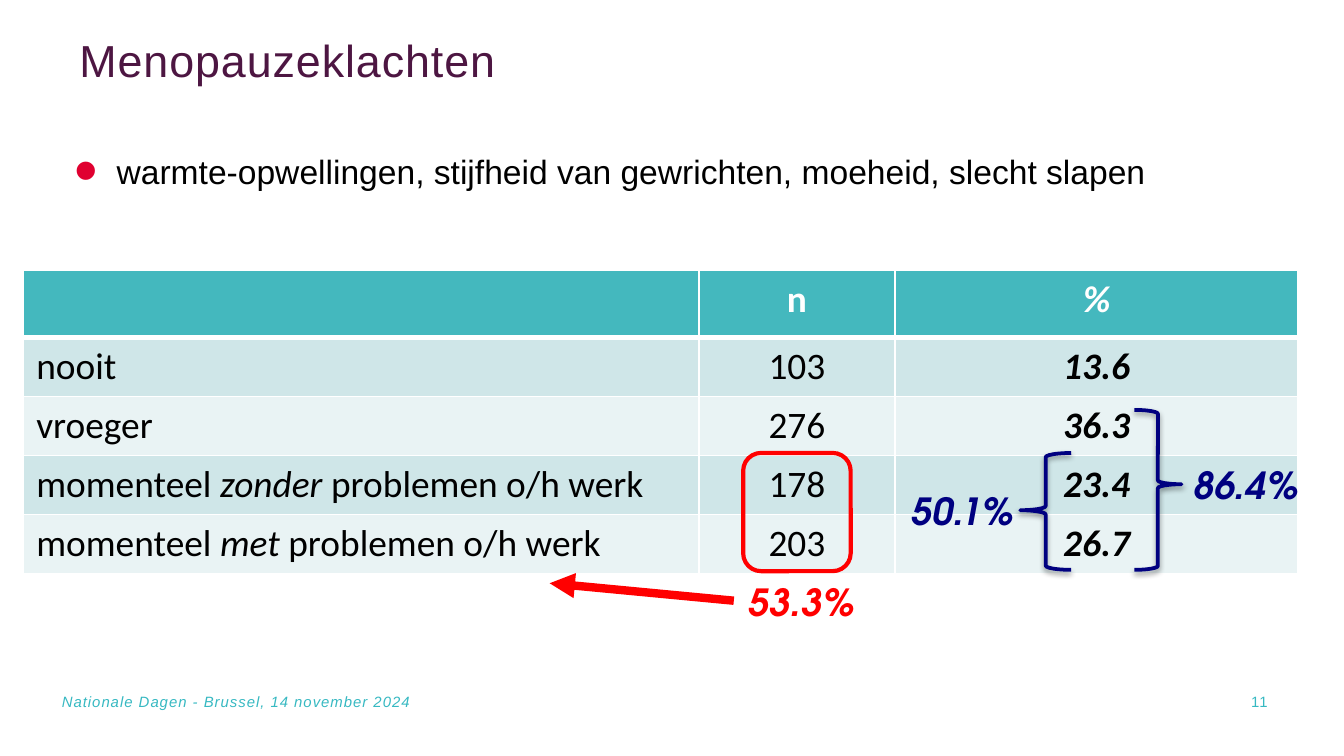
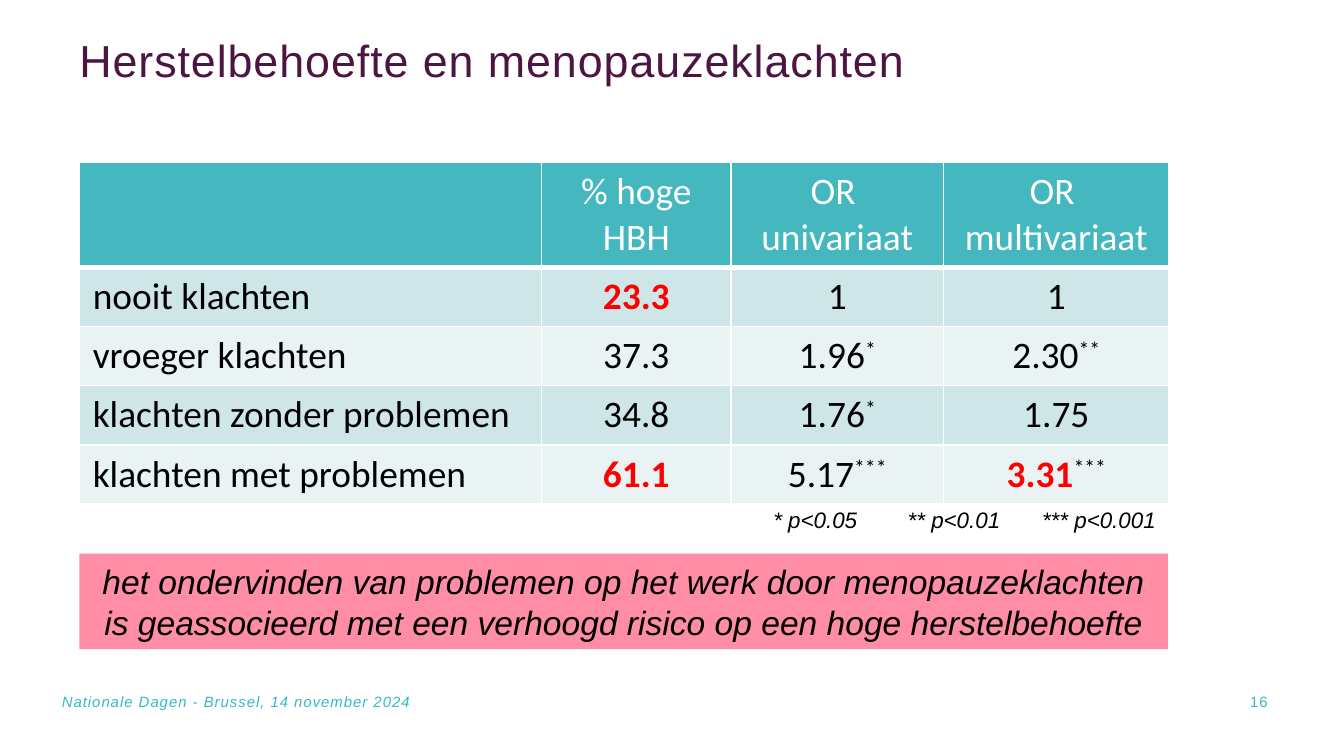
from lxml.etree import SubElement
from pptx import Presentation
from pptx.dml.color import RGBColor
from pptx.enum.shapes import MSO_CONNECTOR, MSO_SHAPE
from pptx.enum.text import MSO_ANCHOR, MSO_AUTO_SIZE, PP_ALIGN
from pptx.oxml import parse_xml
from pptx.oxml.ns import nsdecls, qn
from pptx.util import Emu, Pt

PX = 9144
COLORS = {
    "title": "4D1642",
    "footer": "37B9C2",
    "text": "000000",
    "white": "FFFFFF",
    "header": "44B8BE",
    "odd_row": "CFE6E8",
    "even_row": "E9F3F4",
    "bullet": "E00030",
    "navy": "000080",
    "red": "FF0000",
    "pink": "FF8DA5",
}


def style_run(run, size, color, font="Arial", bold=False, italic=False, spacing=0):
    run.font.size = Pt(size)
    run.font.name = font
    run.font.bold = bold
    run.font.italic = italic
    run.font.color.rgb = RGBColor.from_string(COLORS[color])
    if spacing:
        run.font._element.set("spc", str(spacing))


def add_text(slide, box, text, align=PP_ALIGN.LEFT, anchor=MSO_ANCHOR.TOP,
             inset=True, grow=False, **style):
    shape = slide.shapes.add_textbox(*[Emu(value * PX) for value in box])
    frame = shape.text_frame
    frame.word_wrap = True
    frame.vertical_anchor = anchor
    if grow:
        frame.auto_size = MSO_AUTO_SIZE.SHAPE_TO_FIT_TEXT
    if not inset:
        frame.margin_left = frame.margin_right = 0
        frame.margin_top = frame.margin_bottom = 0
    frame.text = text
    paragraph = frame.paragraphs[0]
    paragraph.alignment = align
    style_run(paragraph.runs[0], **style)
    return paragraph


pages = [
    {
        "title": "Menopauzeklachten",
        "number": "11",
        "origin": (17, 201),
        "columns": [503, 146, 300],
        "header_height": 50,
        "header_bold": True,
        "strong_column": 2,
        "highlights": [],
        "rows": [
            ["", "n", "%"],
            ["nooit", "103", "13.6"],
            ["vroeger", "276", "36.3"],
            ["momenteel _zonder _problemen o/h werk", "178", "23.4"],
            ["momenteel _met _problemen o/h werk", "203", "26.7"],
        ],
    },
    {
        "title": "Herstelbehoefte en menopauzeklachten",
        "number": "16",
        "origin": (59, 121),
        "columns": [344, 141, 158, 168],
        "header_height": 78,
        "header_bold": False,
        "strong_column": None,
        "highlights": ["23.3", "61.1", "3.31"],
        "rows": [
            ["", "% hoge HBH", "OR \nunivariaat", "OR \nmultivariaat"],
            ["nooit klachten", "23.3", "1", "1"],
            ["vroeger klachten", "37.3", "1.96^*", "2.30^**"],
            ["klachten zonder problemen", "34.8", "1.76^*", "1.75"],
            ["klachten met problemen", "61.1", "5.17^***", "3.31^***"],
        ],
    },
]
ROW_HEIGHT = 44

presentation = Presentation()
presentation.slide_width = Emu(1000 * PX)
presentation.slide_height = Emu(presentation.slide_width * 9 // 16)

for page in pages:
    slide = presentation.slides.add_slide(presentation.slide_layouts[6])
    title = add_text(slide, (59, 32, 738, 61), page["title"], inset=False,
                     size=24, color="title", spacing=50)
    title.line_spacing = 0.8
    add_text(slide, (788, 507, 165, 30), page["number"], align=PP_ALIGN.RIGHT,
             anchor=MSO_ANCHOR.MIDDLE, size=8, color="footer", spacing=50)
    add_text(slide, (46, 507, 802, 30), "Nationale Dagen - Brussel, 14 november 2024",
             anchor=MSO_ANCHOR.MIDDLE, inset=False,
             size=8, color="footer", italic=True, spacing=50)

    rows, columns = page["rows"], page["columns"]
    heights = [page["header_height"]] + [ROW_HEIGHT] * (len(rows) - 1)
    box = (*page["origin"], sum(columns), sum(heights))
    table = slide.shapes.add_table(len(rows), len(columns),
                                   *[Emu(value * PX) for value in box]).table
    for column, width in zip(table.columns, columns):
        column.width = Emu(width * PX)
    for row, height in zip(table.rows, heights):
        row.height = Emu(height * PX)

    for row_index, row in enumerate(rows):
        for column_index, text in enumerate(row):
            cell = table.cell(row_index, column_index)
            is_header = row_index == 0
            fill = "header" if is_header else "odd_row" if row_index % 2 else "even_row"
            cell.fill.solid()
            cell.fill.fore_color.rgb = RGBColor.from_string(COLORS[fill])
            widths = {"lnL": 1, "lnR": 1, "lnT": 3 if row_index == 1 else 1,
                      "lnB": 3 if is_header else 1}
            properties = cell._tc.get_or_add_tcPr()
            for position, (side, width) in enumerate(widths.items()):
                properties.insert(position, parse_xml(
                    f'<a:{side} {nsdecls("a")} w="{Pt(width)}"><a:solidFill>'
                    f'<a:srgbClr val="{COLORS["white"]}"/></a:solidFill></a:{side}>'))
            if not text:
                continue

            strong = column_index == page["strong_column"]
            lines = text.split("\n")
            cell.text_frame.text = "\n" * (len(lines) - 1)
            for paragraph, line in zip(cell.text_frame.paragraphs, lines):
                paragraph.alignment = PP_ALIGN.CENTER if column_index else PP_ALIGN.LEFT
                base, _, stars = line.partition("^")
                for index, piece in enumerate(base.split("_")):
                    run = paragraph.add_run()
                    run.text = piece
                    highlighted = piece in page["highlights"]
                    color = "white" if is_header else "red" if highlighted else "text"
                    bold = strong or highlighted or is_header and page["header_bold"]
                    style_run(run, 20, color, "Calibri", bold, strong or index == 1)
                if stars:
                    run = paragraph.add_run()
                    run.text = stars
                    style_run(run, 20, "text", "Calibri")
                    run.font._element.set("baseline", "30000")

complaints, recovery = presentation.slides

symptoms = add_text(complaints, (46, 107, 873, 42),
                    "warmte-opwellingen, stijfheid van gewrichten, moeheid, slecht slapen",
                    size=18, color="text")
properties = symptoms._p.get_or_add_pPr()
properties.set("marL", str(31 * PX))
properties.set("indent", str(-31 * PX))
bullet_color = SubElement(properties, qn("a:buClr"))
SubElement(bullet_color, qn("a:srgbClr"), val=COLORS["bullet"])
SubElement(properties, qn("a:buSzPct"), val="200000")
SubElement(properties, qn("a:buFont"), typeface="Arial")
SubElement(properties, qn("a:buChar"), char="•")

for text, box, color in [
    ("86.4%", (866, 339, 122, 44), "navy"),
    ("50.1%", (655, 358, 122, 44), "navy"),
    ("53.3%", (528, 426, 137, 44), "red"),
]:
    add_text(complaints, box, text, align=PP_ALIGN.CENTER, grow=True, size=20,
             color=color, font="TeX Gyre Adventor", bold=True, italic=True)

for kind, box, rotation, adjustments, color, width in [
    (MSO_SHAPE.RIGHT_BRACE, (759, 337, 38, 87), 180, (0.083, 0.51), "navy", 2),
    (MSO_SHAPE.RIGHT_BRACE, (844, 305, 35, 119), 0, (0.083, 0.465), "navy", 2),
    (MSO_SHAPE.ROUNDED_RECTANGLE, (553, 337, 80, 88), 0, (0.167,), "red", 2.25),
]:
    shape = complaints.shapes.add_shape(kind, *[Emu(value * PX) for value in box])
    shape.rotation = rotation
    for index, value in enumerate(adjustments):
        shape.adjustments[index] = value
    shape.fill.background()
    shape.line.color.rgb = RGBColor.from_string(COLORS[color])
    shape.line.width = Pt(width)
    shape.shadow.inherit = False
    if kind == MSO_SHAPE.RIGHT_BRACE:
        effects = shape._element.spPr.find(qn("a:effectLst"))
        shadow = SubElement(effects, qn("a:outerShdw"), blurRad=str(Pt(3.1)),
                            dist=str(Pt(1.6)), dir="5400000", rotWithShape="0")
        shadow_color = SubElement(shadow, qn("a:srgbClr"), val=COLORS["text"])
        SubElement(shadow_color, qn("a:alpha"), val="38000")

arrow = complaints.shapes.add_connector(
    MSO_CONNECTOR.STRAIGHT, *[Emu(value * PX) for value in (546, 447, 409, 434)])
arrow.line.color.rgb = RGBColor.from_string(COLORS["red"])
arrow.line.width = Pt(4.5)
SubElement(arrow.line._get_or_add_ln(), qn("a:tailEnd"), type="triangle")
SubElement(arrow._element.spPr, qn("a:effectLst"))

conclusion = recovery.shapes.add_shape(
    MSO_SHAPE.RECTANGLE, *[Emu(value * PX) for value in (59, 412, 810, 71)])
conclusion.shadow.inherit = False
conclusion.fill.solid()
conclusion.fill.fore_color.rgb = RGBColor.from_string(COLORS["pink"])
conclusion.line.fill.background()
conclusion.text_frame.word_wrap = True
conclusion.text_frame.auto_size = MSO_AUTO_SIZE.SHAPE_TO_FIT_TEXT
conclusion.text_frame.text = (
    "het ondervinden van problemen op het werk door menopauzeklachten "
    "is geassocieerd met een verhoogd risico op een hoge herstelbehoefte")
paragraph = conclusion.text_frame.paragraphs[0]
paragraph.alignment = PP_ALIGN.CENTER
style_run(paragraph.runs[0], 18, "text", italic=True)

add_text(recovery, (374, 372, 496, 30), "* p<0.05\t** p<0.01\t*** p<0.001",
         align=PP_ALIGN.RIGHT, grow=True, size=12, color="text", italic=True)

presentation.save("out.pptx")
